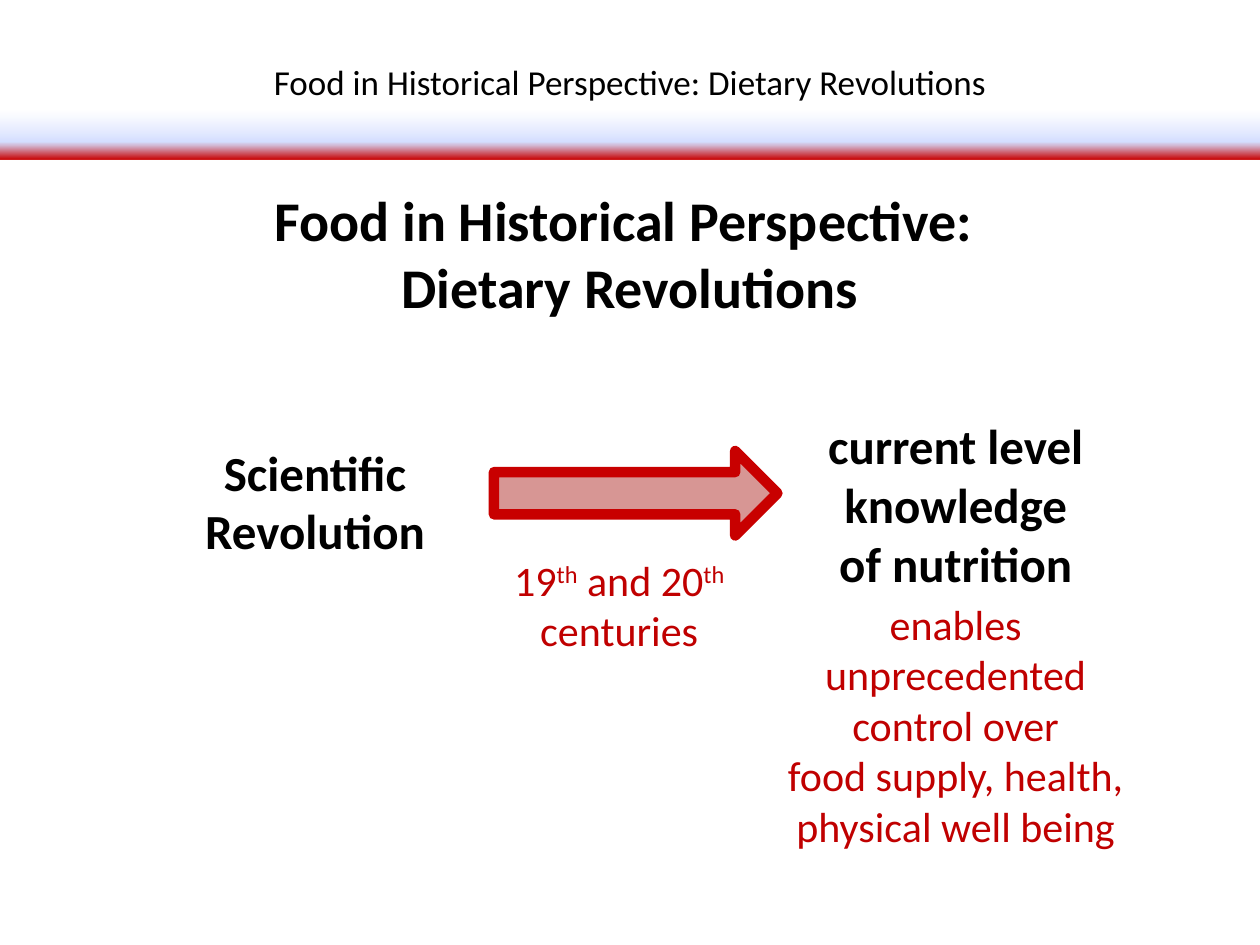
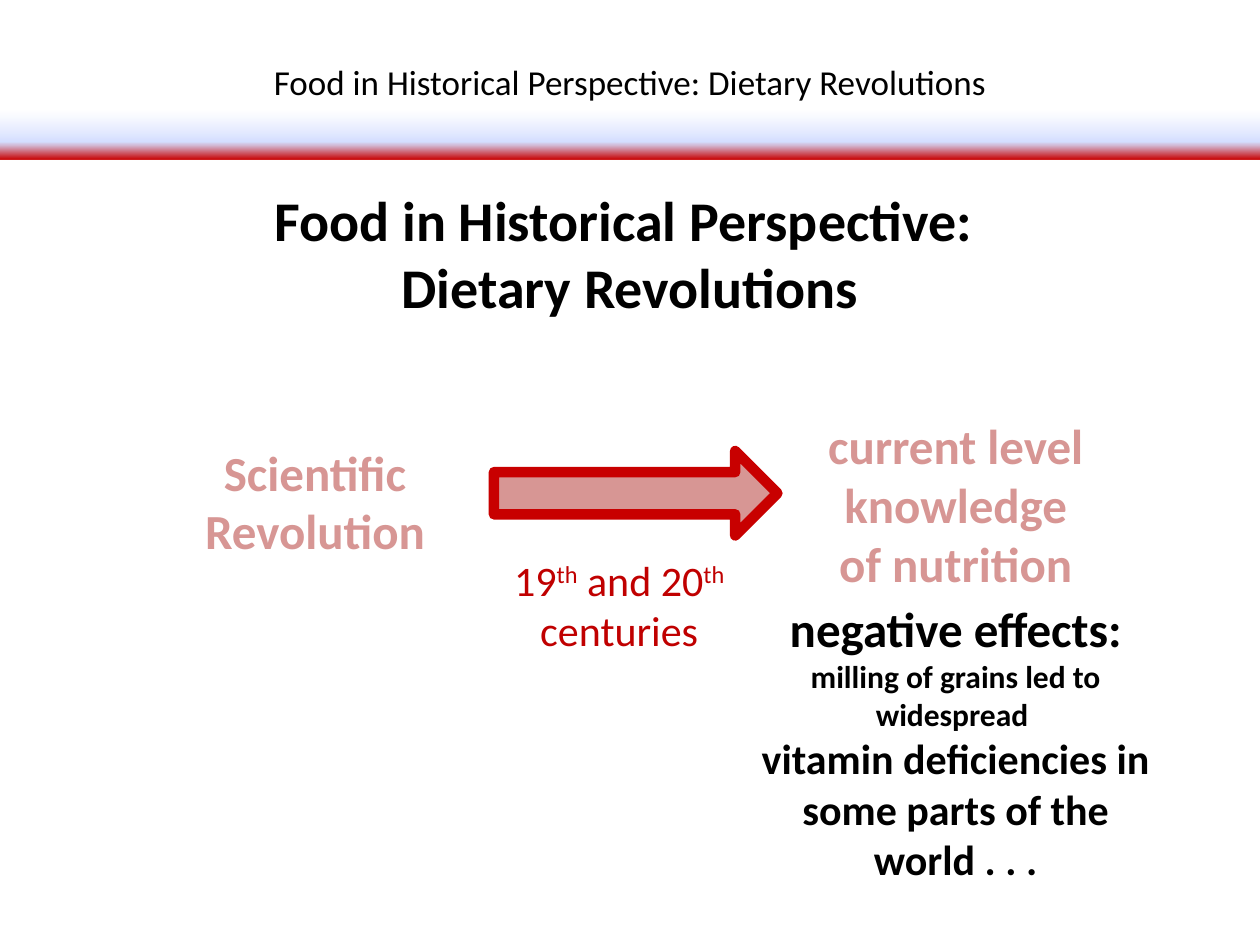
import pptx
import pptx.util
import pptx.dml.color
import pptx.enum.shapes
import pptx.enum.text
import pptx.oxml
import pptx.oxml.ns

Inches, Pt = pptx.util.Inches, pptx.util.Pt
RGBColor = pptx.dml.color.RGBColor
Shape = pptx.enum.shapes.MSO_SHAPE

# Shared look
FONT = "Calibri"
BLACK = RGBColor(0x00, 0x00, 0x00)
DARK_RED = RGBColor(0xC0, 0x00, 0x00)
BAND_RED = RGBColor(0xC8, 0x00, 0x00)
FADED_RED = RGBColor(0xD7, 0x96, 0x94)
PALE_BLUE = RGBColor(0xD4, 0xDE, 0xFF)
WHITE = RGBColor(0xFF, 0xFF, 0xFF)
AMBER = RGBColor(0xFF, 0xC0, 0x00)
# Position, colour and opacity, in percent
BAND_STOPS = [(53, WHITE, 77), (83, PALE_BLUE, 100),
              (100, BAND_RED, 100), (100, AMBER, 100)]
HANGING = 0.38

# Places: left, top, width, height in inches
BAND_BOX = (0, 0.43, 10, 0.84)
TITLE_BOX = (1, 1.42, 8, 1.18)
CAUSE_BOX = (1.25, 3.46, 2.5, 1.04)
ARROW_BOX = (3.92, 3.58, 2.25, 0.67)
PERIOD_BOX = (3.5, 4.35, 2.83, 0.91)
RESULT_BOX = (6.25, 3.25, 2.67, 1.51)
EFFECT_LEFT, EFFECT_TOP, EFFECT_WIDTH = 5.92, 4.7, 3.33

# Content: a paragraph is a list of runs, and "^" marks a superscript run
BAND_TEXT = [["Food in Historical Perspective: Dietary Revolutions"]]
TITLE = [["Food in Historical Perspective: "], ["Dietary Revolutions"]]
CAUSE = [["Scientific"], ["Revolution"]]
PERIOD = [["19", "^th", " and 20", "^th"], ["centuries"]]
RESULT = [["current level"], ["knowledge"], ["of nutrition"]]
SLIDES = [
    {
        "key_color": BLACK,
        "effect": [["enables unprecedented"], ["control over"],
                   ["food supply, health, physical well being"]],
        "sizes": [24, 24, 24], "color": DARK_RED, "bold": False, "height": 2.12,
    },
    {
        "key_color": FADED_RED,
        "effect": [["negative effects:"], ["milling of grains led to widespread "],
                   ["vitamin deficiencies in some parts of the world . . ."]],
        "sizes": [28, 18, 24], "color": BLACK, "bold": True, "height": 2.46,
    },
]


def inches(box):
    return [Inches(length) for length in box]


def write(shape, paragraphs, sizes, color, bold=False, hanging=0):
    """Fill a shape with centred text; sizes is one size or one per paragraph."""
    frame = shape.text_frame
    frame.word_wrap = True
    frame.auto_size = pptx.enum.text.MSO_AUTO_SIZE.SHAPE_TO_FIT_TEXT
    frame.vertical_anchor = pptx.enum.text.MSO_ANCHOR.TOP
    if isinstance(sizes, int):
        sizes = [sizes] * len(paragraphs)
    for index, (runs, size) in enumerate(zip(paragraphs, sizes)):
        paragraph = frame.add_paragraph() if index else frame.paragraphs[0]
        paragraph.alignment = pptx.enum.text.PP_ALIGN.CENTER
        if hanging:
            properties = paragraph._p.get_or_add_pPr()
            properties.set("marL", str(Inches(hanging)))
            properties.set("indent", str(-Inches(hanging)))
        for text in runs:
            run = paragraph.add_run()
            run.text = text.removeprefix("^")
            run.font.name, run.font.size, run.font.bold = FONT, Pt(size), bold
            run.font.color.rgb = color
            if text.startswith("^"):
                run.font._element.set("baseline", "30000")


def add_text(slide, box, *text_style):
    write(slide.shapes.add_textbox(*inches(box)), *text_style)


def add_band(slide):
    band = slide.shapes.add_shape(Shape.RECTANGLE, *inches(BAND_BOX))
    band.shadow.inherit = False
    band.line.fill.background()
    band.fill.gradient()
    band.fill.gradient_angle = 270  # counter-clockwise: runs top to bottom
    stop_list = band._element.spPr.find(".//" + pptx.oxml.ns.qn("a:gsLst"))
    for stop in list(stop_list):
        stop_list.remove(stop)
    for position, color, opacity in BAND_STOPS:
        stop_list.append(pptx.oxml.parse_xml(
            f'<a:gs {pptx.oxml.ns.nsdecls("a")} pos="{position * 1000}">'
            f'<a:srgbClr val="{color}"><a:alpha val="{opacity * 1000}"/>'
            '</a:srgbClr></a:gs>'))
    write(band, BAND_TEXT, 20, BLACK, hanging=HANGING)
    band.text_frame.auto_size = pptx.enum.text.MSO_AUTO_SIZE.NONE


def add_arrow(slide):
    arrow = slide.shapes.add_shape(Shape.RIGHT_ARROW, *inches(ARROW_BOX))
    arrow.shadow.inherit = False
    arrow.fill.solid()
    arrow.fill.fore_color.rgb = FADED_RED
    arrow.line.color.rgb = BAND_RED
    arrow.line.width = Pt(6)


def build_slide(presentation, content):
    slide = presentation.slides.add_slide(presentation.slide_layouts[5])

    # Title and band
    title = slide.shapes.title
    title.left, title.top, title.width, title.height = inches(TITLE_BOX)
    write(title, TITLE, 32, BLACK, True, HANGING)
    add_band(slide)

    # Cause, period and result
    add_text(slide, CAUSE_BOX, CAUSE, 28, content["key_color"], True)
    add_text(slide, RESULT_BOX, RESULT, 28, content["key_color"], True)
    add_text(slide, PERIOD_BOX, PERIOD, 24, DARK_RED)
    effect_box = (EFFECT_LEFT, EFFECT_TOP, EFFECT_WIDTH, content["height"])
    add_text(slide, effect_box, content["effect"], content["sizes"],
             content["color"], content["bold"])
    add_arrow(slide)


def main():
    presentation = pptx.Presentation()
    presentation.slide_width, presentation.slide_height = Inches(10), Inches(7.5)
    for content in SLIDES:
        build_slide(presentation, content)
    presentation.save("out.pptx")


if __name__ == "__main__":
    main()
